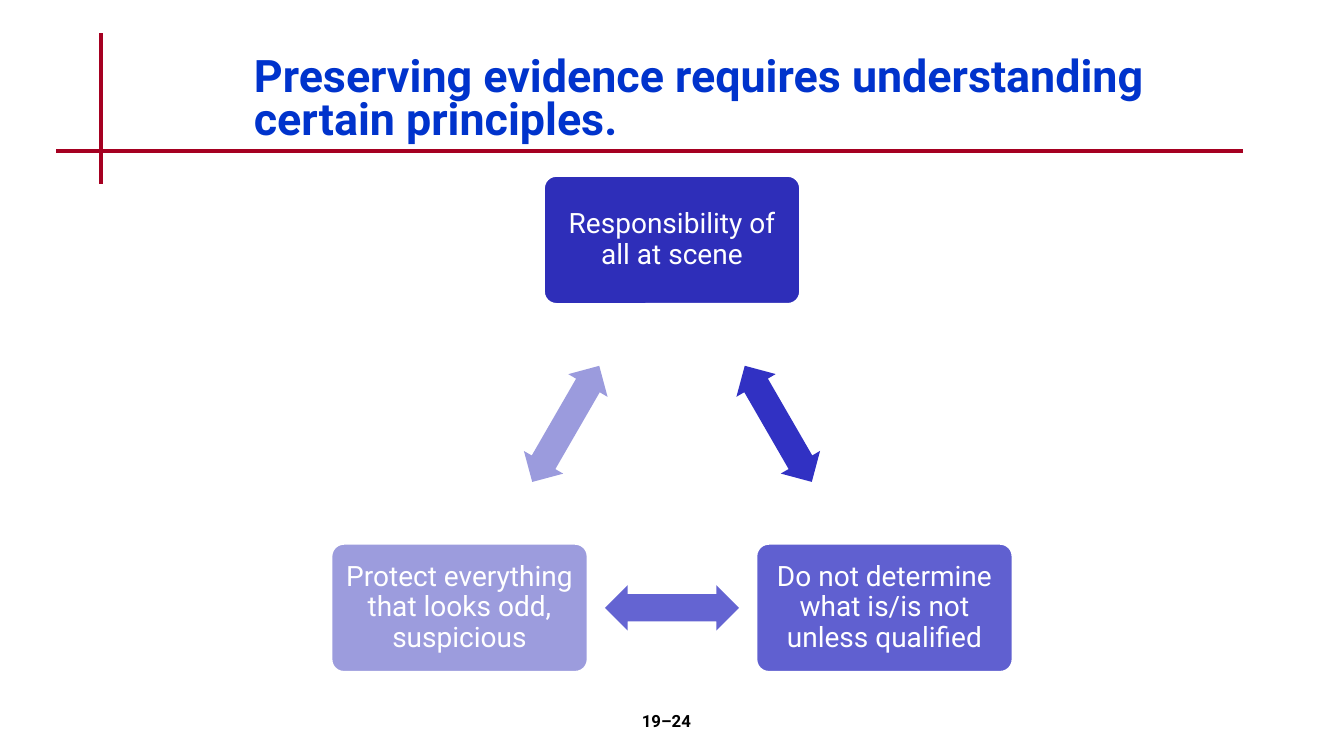
from math import cos, radians, sin

from pptx import Presentation
from pptx.dml.color import RGBColor
from pptx.enum.shapes import MSO_CONNECTOR as Connector, MSO_SHAPE as Shape
from pptx.enum.text import MSO_ANCHOR as Anchor, PP_ALIGN as Align
from pptx.util import Pt
from lxml import etree

PX = 9144
FONT = "Roboto"
DRAWING = "http://schemas.openxmlformats.org/drawingml/2006/main"
COLORS = {
    "rule": "A50021", "title": "0033CC", "number": "000000", "white": "FFFFFF",
    "node_dark": "2E2EB9", "node_mid": "6060D0", "node_light": "9C9CDD",
    "arrow_dark": "3131C3", "arrow_mid": "6464D2", "arrow_light": "9B9BDD",
}
PRINCIPLES = [
    ("Responsibility of all at scene", "dark"),
    ("Do not determine what is/is not unless qualified", "mid"),
    ("Protect everything that looks odd, suspicious", "light"),
]


def px(*lengths):
    return [round(length * PX) for length in lengths]


def color(name):
    return RGBColor.from_string(COLORS[name])


def write(shape, text, size, color_name, bold=False, align=Align.LEFT,
          anchor=Anchor.TOP, spacing=1.0, inset=None):
    frame = shape.text_frame
    settings = {"word_wrap": True, "vertical_anchor": anchor}
    if inset is not None:
        for side in ("left", "top", "right", "bottom"):
            settings[f"margin_{side}"] = inset * PX
    for name, value in settings.items():
        setattr(frame, name, value)
    para = frame.paragraphs[0]
    para.alignment = align
    para.line_spacing = spacing
    span = para.add_run()
    span.text = text
    for name, value in {"name": FONT, "size": Pt(size), "bold": bold}.items():
        setattr(span.font, name, value)
    span.font.color.rgb = color(color_name)


def add_rule(page, start, end):
    rule = page.shapes.add_connector(Connector.STRAIGHT, *px(*start, *end))
    rule.line.color.rgb = color("rule")
    rule.line.width = Pt(3)
    etree.SubElement(rule._element.spPr, f"{{{DRAWING}}}effectLst")


def add_centered(page, kind, center, size, fill):
    (x, y), (width, height) = center, size
    shape = page.shapes.add_shape(
        kind, *px(x - width / 2, y - height / 2, width, height))
    shape.shadow.inherit = False
    shape.fill.solid()
    shape.fill.fore_color.rgb = color(fill)
    return shape


def add_header(page, box):
    left, top, width, height = box
    add_rule(page, (left + 44, top), (left + 44, top + height))
    add_rule(page, (left, top + 117), (left + width, top + 117))
    title = page.shapes.add_textbox(*px(left + 186, top + 17, 903, 100))
    write(title, "Preserving evidence requires understanding certain principles.",
          32, "title", bold=True, anchor=Anchor.MIDDLE, spacing=0.8)


def add_cycle(page, box):
    left, top, width, height = box
    node_size, arrow_size = (255, 128), (133, 45)
    radius = (height - node_size[1]) / 1.5
    middle_x, middle_y = left + width / 2, top + node_size[1] / 2 + radius

    def around(angle, distance):
        return (middle_x + distance * sin(radians(angle)),
                middle_y - distance * cos(radians(angle)))

    for index, (text, shade) in enumerate(PRINCIPLES):
        angle = 120 * index
        node = add_centered(page, Shape.ROUNDED_RECTANGLE, around(angle, radius),
                            node_size, f"node_{shade}")
        node.adjustments[0] = 0.1
        node.line.color.rgb = color("white")
        node.line.width = Pt(2)
        write(node, text, 20, "white", align=Align.CENTER,
              anchor=Anchor.MIDDLE, spacing=0.9, inset=8)
        arrow = add_centered(page, Shape.LEFT_RIGHT_ARROW,
                             around(angle + 60, radius / 2), arrow_size,
                             f"arrow_{shade}")
        arrow.adjustments[0] = 0.6
        arrow.adjustments[1] = 0.5
        arrow.line.fill.background()
        arrow.rotation = angle + 60


def add_page_number(page, box):
    number = page.shapes.add_textbox(*px(*box))
    write(number, "19–24", 12, "number", bold=True, align=Align.CENTER)


def main():
    deck = Presentation()
    deck.slide_width, deck.slide_height = px(1333, 750)
    page = deck.slides.add_slide(deck.slide_layouts[6])
    add_header(page, (56, 33, 1177, 150))
    add_page_number(page, (522, 700, 278, 50))
    add_cycle(page, (328, 174, 677, 493))
    deck.save("out.pptx")


if __name__ == "__main__":
    main()
